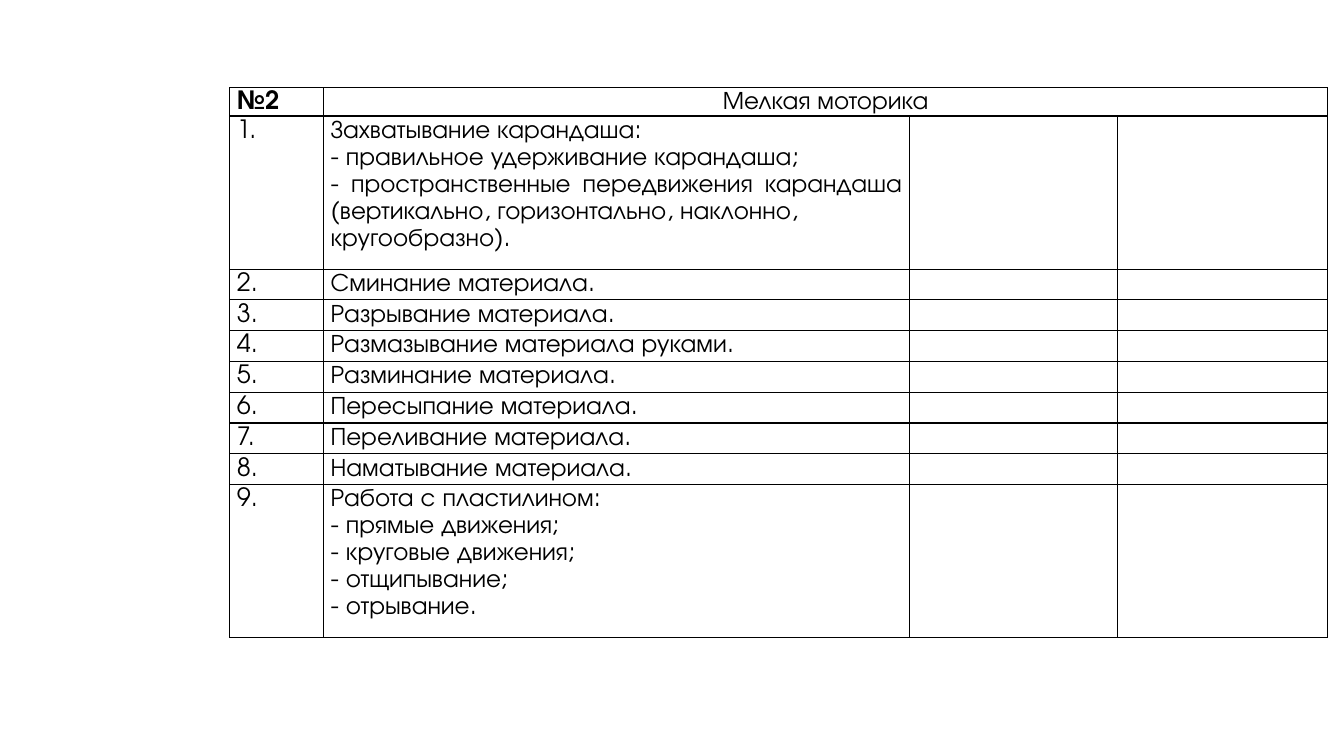
from lxml.etree import SubElement
from pptx import Presentation
from pptx.dml.color import RGBColor
from pptx.enum.text import PP_ALIGN
from pptx.oxml.ns import qn
from pptx.util import Inches, Pt

FONT = "TeX Gyre Adventor"
INK = "000000"
TITLE = ("№2", "Мелкая моторика")
SKILLS = [
    ["Захватывание карандаша:",
     "- правильное удерживание карандаша;",
     "- пространственные передвижения карандаша (вертикально, горизонтально, наклонно,",
     "кругообразно)."],
    ["Сминание материала."],
    ["Разрывание материала."],
    ["Размазывание материала руками."],
    ["Разминание материала."],
    ["Пересыпание материала."],
    ["Переливание материала."],
    ["Наматывание материала."],
    ["Работа с пластилином:",
     "- прямые движения;",
     "- круговые движения;",
     "- отщипывание;",
     "- отрывание."],
]
COLUMN_WIDTHS = [0.93, 5.81, 2.06, 2.09]
TITLE_HEIGHT, SHORT_HEIGHT, LONG_HEIGHT = 0.28, 0.3, 1.52
MARGINS = {"margin_left": 0.07, "margin_right": 0.07, "margin_top": 0, "margin_bottom": 0}


def write(cell, lines, bold=False, align=PP_ALIGN.JUSTIFY):
    cell.text = "\n".join(lines)
    for paragraph in cell.text_frame.paragraphs:
        paragraph.alignment = align
        paragraph.line_spacing = 1.15
        for run in paragraph.runs:
            for key, value in {"name": FONT, "size": Pt(18), "bold": bold}.items():
                setattr(run.font, key, value)
            run.font.color.rgb = RGBColor.from_string(INK)


def outline(cell):
    """Draw a thin line on all four sides of an unfilled cell."""
    properties = cell._tc.get_or_add_tcPr()
    for side in ("a:lnL", "a:lnR", "a:lnT", "a:lnB"):
        line = SubElement(properties, qn(side), w=str(Pt(1)))
        fill = SubElement(line, qn("a:solidFill"))
        SubElement(fill, qn("a:srgbClr"), val=INK)
    SubElement(properties, qn("a:noFill"))


prs = Presentation()
prs.slide_width, prs.slide_height = Inches(13.33), Inches(7.5)
slide = prs.slides.add_slide(prs.slide_layouts[6])

row_heights = [TITLE_HEIGHT] + [
    LONG_HEIGHT if len(lines) > 1 else SHORT_HEIGHT for lines in SKILLS
]
checklist = slide.shapes.add_table(
    len(row_heights), len(COLUMN_WIDTHS), Inches(2.28), Inches(0.87),
    Inches(sum(COLUMN_WIDTHS)), Inches(sum(row_heights)),
).table
checklist.first_row = False
checklist.horz_banding = False
for column, width in zip(checklist.columns, COLUMN_WIDTHS):
    column.width = Inches(width)
for row, height in zip(checklist.rows, row_heights):
    row.height = Inches(height)

for cell in checklist.iter_cells():
    for margin, value in MARGINS.items():
        setattr(cell, margin, Inches(value))
    outline(cell)

checklist.cell(0, 1).merge(checklist.cell(0, 3))
write(checklist.cell(0, 0), [TITLE[0]], bold=True)
write(checklist.cell(0, 1), [TITLE[1]], align=PP_ALIGN.CENTER)
for number, lines in enumerate(SKILLS, start=1):
    write(checklist.cell(number, 0), [f"{number}."])
    write(checklist.cell(number, 1), lines)

prs.save("out.pptx")
